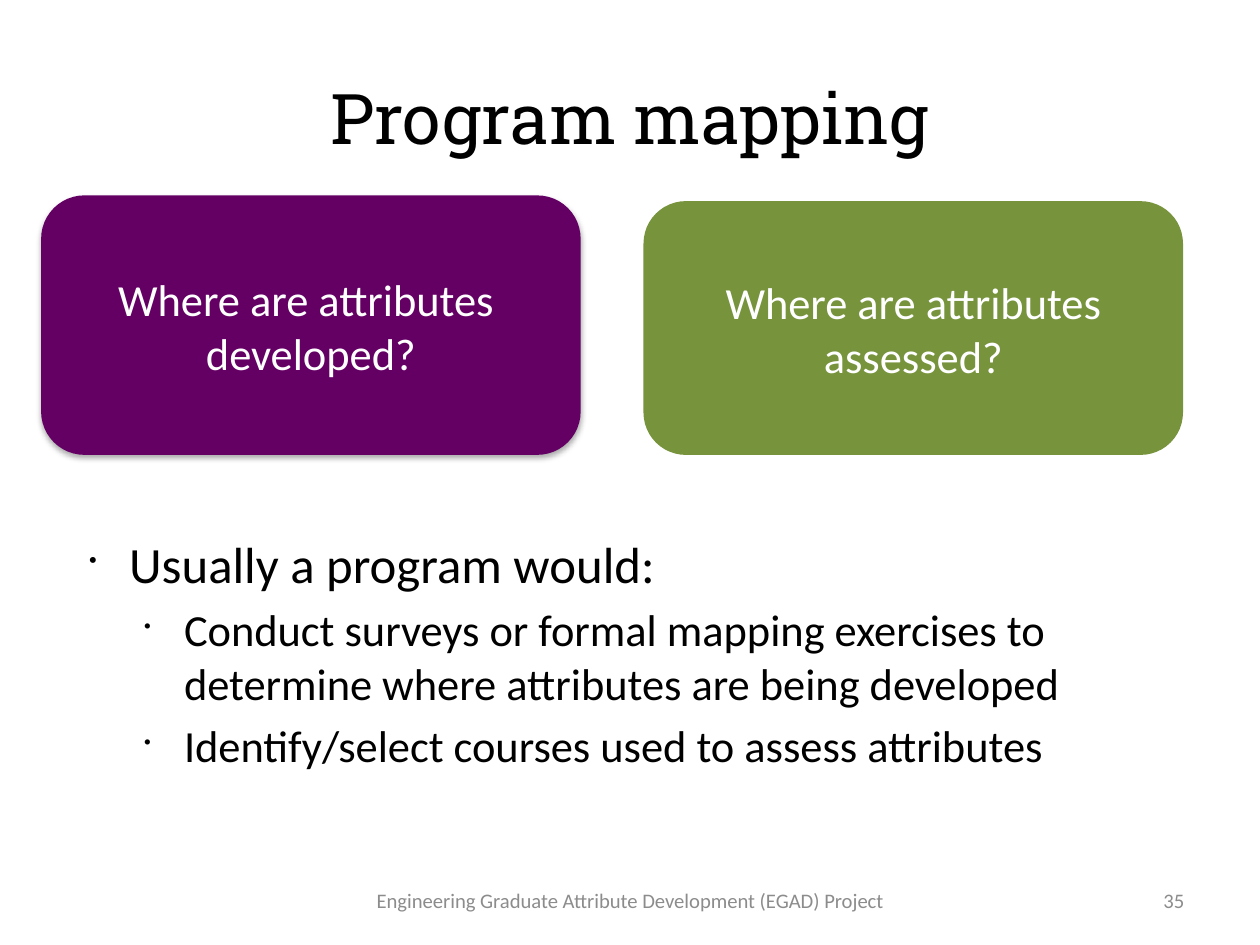
import pptx
import pptx.dml.color
import pptx.enum.shapes
import pptx.enum.text
import pptx.oxml
import pptx.oxml.ns
import pptx.util
from lxml import etree

Inches = pptx.util.Inches
Pt = pptx.util.Pt
RGBColor = pptx.dml.color.RGBColor
Align = pptx.enum.text.PP_ALIGN
Anchor = pptx.enum.text.MSO_ANCHOR
qn = pptx.oxml.ns.qn

BLACK = RGBColor(0x00, 0x00, 0x00)
WHITE = RGBColor(0xFF, 0xFF, 0xFF)
GREY = RGBColor(0x8C, 0x8C, 0x8C)
PURPLE = RGBColor(0x64, 0x00, 0x64)
GREEN = RGBColor(0x77, 0x93, 0x3C)

CM_PER_INCH = 2.54
SHADOW = (
    '<a:outerShdw xmlns:a="http://schemas.openxmlformats.org/drawingml/2006/main"'
    ' blurRad="44450" dist="27940" dir="5400000" rotWithShape="0">'
    '<a:srgbClr val="000000"><a:alpha val="32000"/></a:srgbClr></a:outerShdw>'
)


class SlideWriter:
    """Holds the fonts and the current page, and adds styled elements to it."""

    heading_font = "Roboto Slab"
    body_font = "Calibri"

    def __init__(self, page):
        self.page = page

    def place(self, box, left, top, width, height):
        box.left, box.top = Inches(left), Inches(top)
        box.width, box.height = Inches(width), Inches(height)

    def format_frame(self, frame, anchor, side, edge, wrap=True):
        frame.word_wrap = wrap
        frame.vertical_anchor = anchor
        frame.margin_left = frame.margin_right = Inches(side)
        frame.margin_top = frame.margin_bottom = Inches(edge)

    def format_para(self, para, size, color, align, font=body_font):
        para.alignment = align
        for span in para.runs:
            span.font.name = font
            span.font.size = Pt(size)
            span.font.color.rgb = color

    def title(self, text, *bounds):
        box = self.page.shapes.title
        self.place(box, *bounds)
        box.text_frame.text = text
        self.format_frame(box.text_frame, Anchor.MIDDLE, 0.11, 0.06)
        self.format_para(box.text_frame.paragraphs[0], 44, BLACK, Align.CENTER, self.heading_font)

    def text_box(self, text, bounds, anchor):
        box = self.page.shapes.add_textbox(*map(Inches, bounds))
        box.text_frame.text = text
        self.format_frame(box.text_frame, anchor, 0.11, 0.06)
        return box.text_frame.paragraphs

    def footer(self, text, align, *bounds):
        para = self.text_box(text, bounds, Anchor.MIDDLE)[0]
        self.format_para(para, 13, GREY, align)

    def bullets(self, items, *bounds):
        text = "\n".join(line for level, line in items)
        paras = self.text_box(text, bounds, Anchor.TOP)
        for index, (para, (level, line)) in enumerate(zip(paras, items)):
            para.level = level
            para.space_before = Pt(5.6 if index else 0)
            properties = para._p.get_or_add_pPr()
            properties.set("marL", str(Inches((0.47, 0.95)[level])))
            properties.set("indent", str(Inches(-0.35)))
            etree.SubElement(properties, qn("a:buSzPct")).set("val", "45000")
            etree.SubElement(properties, qn("a:buChar")).set("char", "•")
            self.format_para(para, (32, 28)[level], BLACK, Align.LEFT)

    def question(self, text, color, shadow, *bounds):
        kind = pptx.enum.shapes.MSO_SHAPE.ROUNDED_RECTANGLE
        box = self.page.shapes.add_shape(kind, *map(Inches, bounds))
        box.adjustments[0] = 0.167
        box.fill.solid()
        box.fill.fore_color.rgb = color
        box.line.fill.background()
        box.shadow.inherit = False
        if shadow:
            effects = box._element.spPr.find(qn("a:effectLst"))
            effects.append(pptx.oxml.parse_xml(SHADOW))
        box.text_frame.text = text
        self.format_frame(box.text_frame, Anchor.MIDDLE, 0.1, 0.05, wrap=False)
        for para in box.text_frame.paragraphs:
            para.line_spacing = 1.02
            self.format_para(para, 28, WHITE, Align.CENTER)


def main():
    deck = pptx.Presentation()
    deck.slide_width = Inches(28 / CM_PER_INCH)
    deck.slide_height = Inches(21 / CM_PER_INCH)
    writer = SlideWriter(deck.slides.add_slide(deck.slide_layouts[5]))

    writer.title("Program mapping", 0.55, 0.33, 9.92, 1.38)
    writer.bullets(
        [
            (0, "Usually a program would:"),
            (1, "Conduct surveys or formal mapping exercises to determine where attributes are being developed"),
            (1, "Identify/select courses used to assess attributes"),
        ],
        0.55, 4.6, 9.92, 2.78,
    )
    writer.footer(
        "Engineering Graduate Attribute Development (EGAD) Project",
        Align.CENTER, 3.07, 7.66, 4.88, 0.44,
    )
    writer.footer("35", Align.RIGHT, 7.9, 7.66, 2.57, 0.44)
    writer.question("Where are attributes \ndeveloped?", PURPLE, True, 0.36, 1.71, 4.72, 2.27)
    writer.question("Where are attributes\nassessed?", GREEN, False, 5.63, 1.76, 4.72, 2.22)

    deck.save("out.pptx")


if __name__ == "__main__":
    main()
